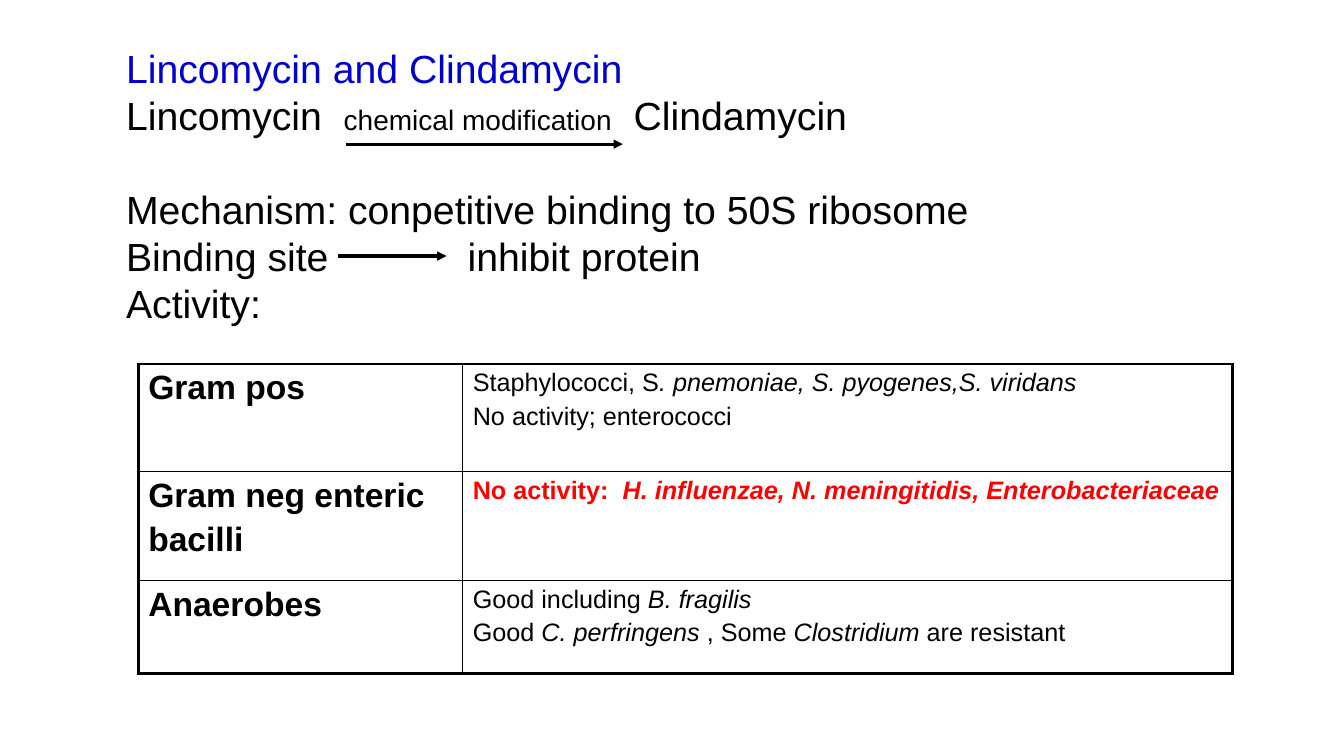
from pptx import Presentation
from pptx.dml.color import RGBColor
from pptx.enum.shapes import MSO_CONNECTOR
from pptx.enum.text import MSO_ANCHOR, MSO_AUTO_SIZE, PP_ALIGN
from pptx.oxml import parse_xml
from pptx.oxml.ns import nsdecls
from pptx.util import Inches, Pt

BLACK, BLUE, RED = "000000", "0000CC", "FF0000"
TEXT_LEFT, TEXT_WIDTH = 8.63, 64.35
TITLE_TOP, LINE_HEIGHT = 5.87, 6.22
BODY_TOP = TITLE_TOP + LINE_HEIGHT
THICK, THIN = 2.25, 1


def rgb(value):
    return RGBColor.from_string(value)


class SlideBuilder:
    """Places elements on a grid of 100 columns by 100 rows."""

    font = "Arial"
    size = 28

    def __init__(self, prs):
        self.prs = prs
        self.slide = prs.slides.add_slide(prs.slide_layouts[1])

    def x(self, cols):
        return round(self.prs.slide_width * cols / 100)

    def y(self, rows):
        return round(self.prs.slide_height * rows / 100)

    def run(self, p, text, size=None, color=BLACK, bold=False, italic=False):
        r = p.add_run()
        r.text = text
        f = r.font
        f.name, f.size = self.font, Pt(size or self.size)
        f.bold, f.italic = bold, italic
        f.color.rgb = rgb(color)

    def placeholder(self, index, left, top, width, height):
        """Move a placeholder, clear its insets above and below, return its text frame."""
        sp = self.slide.placeholders[index]
        sp.left, sp.top = self.x(left), self.y(top)
        sp.width, sp.height = self.x(width), self.y(height)
        tf = sp.text_frame
        tf.auto_size = MSO_AUTO_SIZE.NONE
        tf.vertical_anchor = MSO_ANCHOR.TOP
        tf.margin_top = tf.margin_bottom = 0
        return tf

    def title(self, text, *box):
        p = self.placeholder(0, *box).paragraphs[0]
        p.alignment = PP_ALIGN.LEFT
        self.run(p, text, color=BLUE)

    def body(self, lines, *box):
        """Each line is (space before in points, runs)."""
        tf = self.placeholder(1, *box)
        for i, (space, runs) in enumerate(lines):
            p = tf.add_paragraph() if i else tf.paragraphs[0]
            p.space_before = Pt(space)
            pPr = p._p.get_or_add_pPr()
            pPr.set("marL", "0")
            pPr.set("indent", "0")
            pPr.append(parse_xml(f'<a:buNone {nsdecls("a")}/>'))
            for text, size in runs:
                self.run(p, text, size)

    def label(self, text, left, top, width, height):
        tf = self.slide.shapes.add_textbox(
            self.x(left), self.y(top), self.x(width), self.y(height)).text_frame
        tf.word_wrap = True
        tf.margin_left = tf.margin_right = tf.margin_top = tf.margin_bottom = 0
        self.run(tf.paragraphs[0], text)

    def arrow(self, x1, x2, y):
        line = self.slide.shapes.add_connector(
            MSO_CONNECTOR.STRAIGHT, self.x(x1), self.y(y), self.x(x2), self.y(y))
        line.line.color.rgb = rgb(BLACK)
        line.line.width = Pt(THICK)
        line.line._get_or_add_ln().append(
            parse_xml(f'<a:tailEnd {nsdecls("a")} type="triangle"/>'))
        line._element.spPr.append(parse_xml(f'<a:effectLst {nsdecls("a")}/>'))

    def borders(self, cell, widths):
        """Widths run left, right, top, bottom, in points."""
        tcPr = cell._tc.get_or_add_tcPr()
        for i, (side, width) in enumerate(zip("LRTB", widths)):
            tcPr.insert(i, parse_xml(
                f'<a:ln{side} {nsdecls("a")} w="{Pt(width)}"><a:solidFill>'
                f'<a:srgbClr val="{BLACK}"/></a:solidFill></a:ln{side}>'))

    def cell_text(self, cell, lines, size, color, bold):
        """Text between asterisks is italic."""
        for i, line in enumerate(lines):
            p = cell.text_frame.add_paragraph() if i else cell.text_frame.paragraphs[0]
            p.space_before = Pt(size * 0.2)
            for n, part in enumerate(line.split("*")):
                if part:
                    self.run(p, part, size, color, bold, italic=n % 2 == 1)

    def table(self, rows, left, top, col_widths, row_heights):
        n_rows, n_cols = len(row_heights), len(col_widths)
        table = self.slide.shapes.add_table(
            n_rows, n_cols, self.x(left), self.y(top),
            self.x(sum(col_widths)), self.y(sum(row_heights))).table
        table.first_row = table.horz_banding = False
        for col, width in zip(table.columns, col_widths):
            col.width = self.x(width)
        for row, height in zip(table.rows, row_heights):
            row.height = self.y(height)
        for r, (heading, details, color) in enumerate(rows):
            for c, style in enumerate([(heading, 24, BLACK, True),
                                       (details, 18, color, color == RED)]):
                cell = table.cell(r, c)
                cell.fill.background()
                self.cell_text(cell, *style)
                outer = (c == 0, c == n_cols - 1, r == 0, r == n_rows - 1)
                self.borders(cell, [THICK if edge else THIN for edge in outer])


def main():
    prs = Presentation()
    prs.slide_width, prs.slide_height = Inches(13.33), Inches(7.5)
    s = SlideBuilder(prs)

    s.title("Lincomycin and Clindamycin", TEXT_LEFT, TITLE_TOP, TEXT_WIDTH, LINE_HEIGHT)
    s.body([
        (0, [("Lincomycin  ", 28), ("chemical modification", 20), ("  Clindamycin", 28)]),
        (33.6, [("Mechanism: conpetitive binding to 50S ribosome", 28)]),
        (0, [("Binding site", 28)]),
        (0, [("Activity:", 28)]),
    ], TEXT_LEFT, BODY_TOP, TEXT_WIDTH, 5 * LINE_HEIGHT)
    s.label("inhibit protein", 34.8, BODY_TOP + 3 * LINE_HEIGHT, 20, LINE_HEIGHT)

    s.table([
        (["Gram pos"],
         ["Staphylococci, S*. pnemoniae, S. pyogenes,S. viridans*",
          "No activity; enterococci"], BLACK),
        (["Gram neg enteric", "bacilli"],
         ["No activity:  *H. influenzae, N. meningitidis, Enterobacteriaceae*"], RED),
        (["Anaerobes"],
         ["Good including *B. fragilis*",
          "Good *C. perfringens *, Some* Clostridium *are resistant"], BLACK),
    ], 10.28, 48.13, [24.15, 57.3], [14.27, 14.4, 12.27])

    s.arrow(25.73, 46.35, 19.07)
    s.arrow(25.13, 33.23, 33.87)
    prs.save("out.pptx")


if __name__ == "__main__":
    main()
